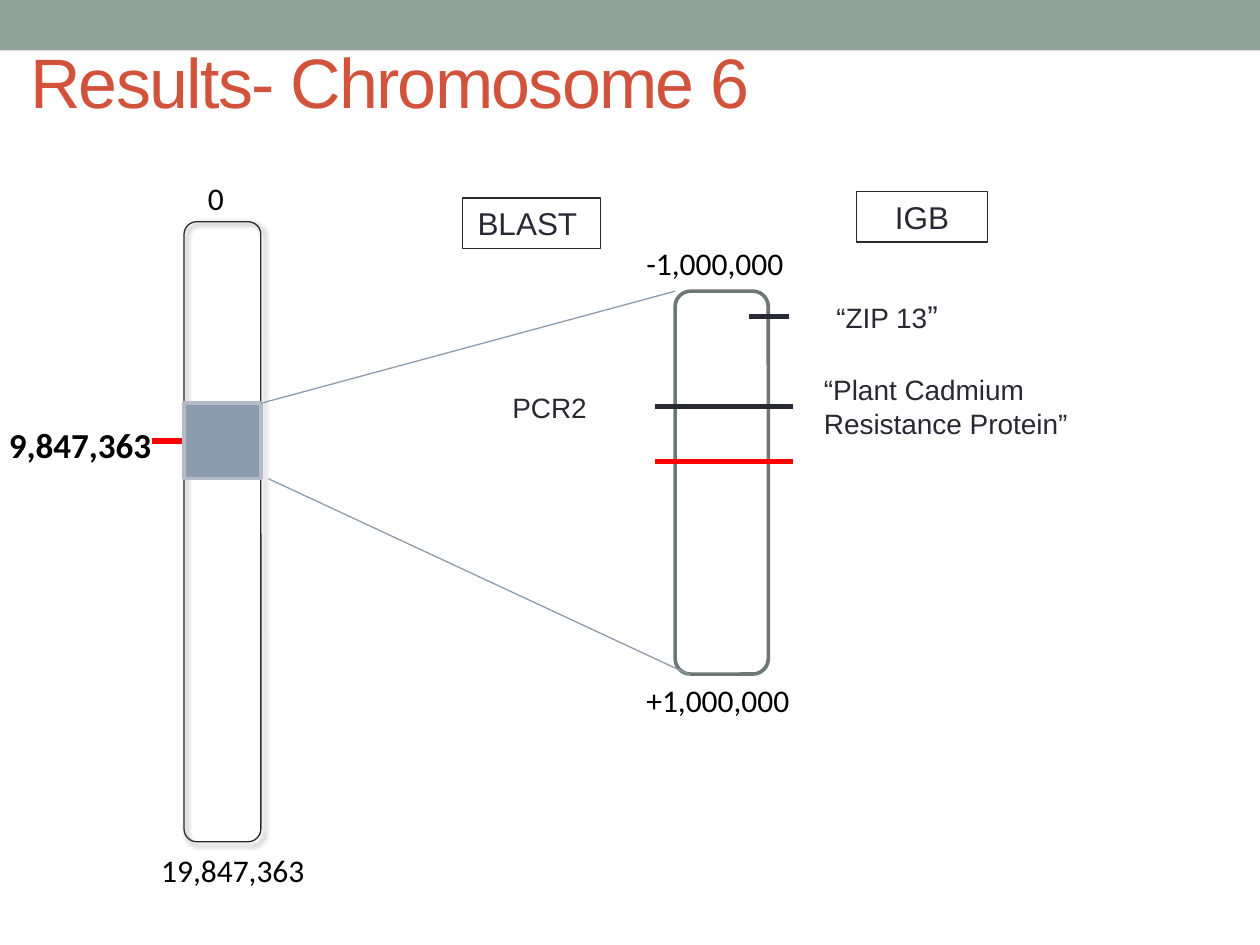
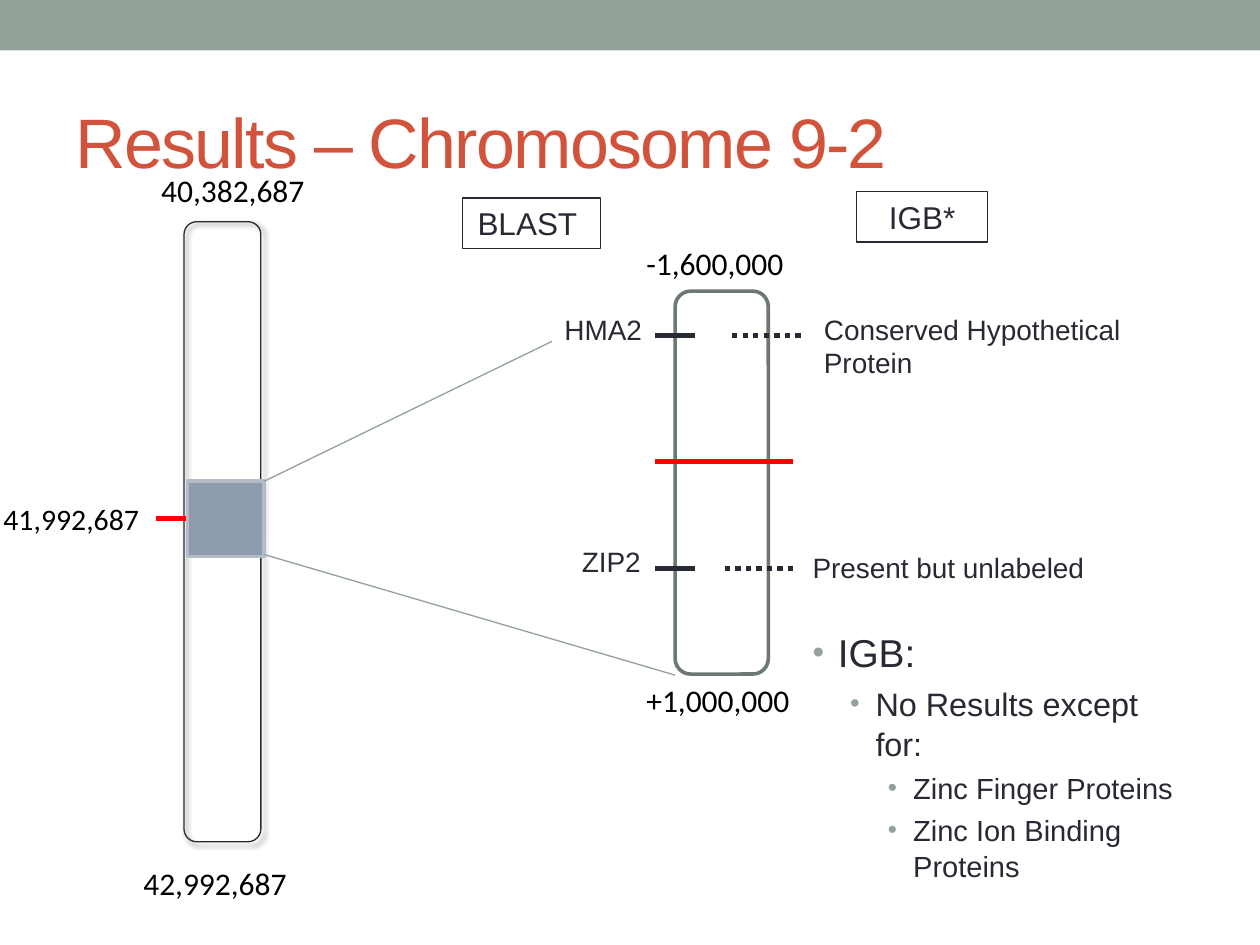
from lxml import etree
from pptx import Presentation
from pptx.dml.color import RGBColor
from pptx.enum.dml import MSO_LINE
from pptx.enum.shapes import MSO_CONNECTOR, MSO_SHAPE
from pptx.enum.text import MSO_ANCHOR, PP_ALIGN
from pptx.oxml.ns import qn
from pptx.util import Cm, Pt

# Colours
BLACK = RGBColor(0x00, 0x00, 0x00)
WHITE = RGBColor(0xFF, 0xFF, 0xFF)
RED = RGBColor(0xFF, 0x00, 0x00)
INK = RGBColor(0x29, 0x29, 0x34)
RUST = RGBColor(0xD2, 0x53, 0x3C)
SAGE = RGBColor(0x93, 0xA2, 0x99)
DARK_SAGE = RGBColor(0x6D, 0x78, 0x71)
STEEL = RGBColor(0x8C, 0x9C, 0xAD)
PALE_STEEL = RGBColor(0xB3, 0xBB, 0xC6)

# Geometry in cm
CHROM_X, CHROM_Y, CHROM_W, CHROM_H = 3.71, 4.47, 1.55, 12.5
REGION_X, REGION_Y, REGION_W, REGION_H = 13.61, 5.87, 1.88, 7.72
BLOCK_H = 1.52
STUB = 0.64                     # red marker left of the block
TICK_X1, TICK_X2 = 13.21, 15.98  # full-width tick on the region
SHORT_TICK = 0.81
DOTTED_TICK = 1.47


def add_run(p, text, size, color=INK, font="Arial", bold=False):
    r = p.add_run()
    r.text = text
    r.font.size, r.font.name, r.font.bold = Pt(size), font, bold
    r.font.color.rgb = color
    return r


def add_text(s, x, y, w, h, runs, align=PP_ALIGN.LEFT, **style):
    """Text box with one paragraph; runs are (text, size) pairs."""
    tf = s.shapes.add_textbox(Cm(x), Cm(y), Cm(w), Cm(h)).text_frame
    tf.word_wrap = True
    p = tf.paragraphs[0]
    p.alignment = align
    for text, size in runs:
        add_run(p, text, size, **style)
    return tf


def add_gene(s, x, y, w, text, h=0.94):
    add_text(s, x, y, w, h, [(text, 16)])


def add_position(s, x, y, w, text, size=18, **style):
    add_text(s, x, y, w, 1.02, [(text, size)], color=BLACK, font="Calibri", **style)


def add_box(s, kind, x, y, w, h, fill=None, line=None, width=0.75):
    sp = s.shapes.add_shape(kind, Cm(x), Cm(y), Cm(w), Cm(h))
    sp.shadow.inherit = False
    if fill is None:
        sp.fill.background()
    else:
        sp.fill.solid()
        sp.fill.fore_color.rgb = fill
    if line is None:
        sp.line.fill.background()
    else:
        sp.line.color.rgb = line
        sp.line.width = Pt(width)
    return sp


def add_heading(s, x, y, w, text):
    sp = add_box(s, MSO_SHAPE.RECTANGLE, x, y, w, 1.02, line=INK)
    tf = sp.text_frame
    tf.vertical_anchor = MSO_ANCHOR.TOP
    tf.paragraphs[0].alignment = PP_ALIGN.CENTER
    add_run(tf.paragraphs[0], text, 18)


def add_line(s, x1, y1, x2, y2, color, width=0.75, dash=None):
    c = s.shapes.add_connector(MSO_CONNECTOR.STRAIGHT, Cm(x1), Cm(y1), Cm(x2), Cm(y2))
    c.line.color.rgb = color
    c.line.width = Pt(width)
    if dash:
        c.line.dash_style = dash
    etree.SubElement(c._element.spPr, qn("a:effectLst"))


def add_tick(s, x1, x2, y, color=INK, dash=None):
    add_line(s, x1, y, x2, y, color, 3, dash)


def add_shadow(sp):
    effects = sp._element.spPr.find(qn("a:effectLst"))
    shadow = etree.SubElement(effects, qn("a:outerShdw"), blurRad=str(Pt(3)),
                              dist=str(Pt(2)), dir="2700000", rotWithShape="0")
    clr = etree.SubElement(shadow, qn("a:srgbClr"), val=str(BLACK))
    etree.SubElement(clr, qn("a:alpha"), val="60000")


def add_bullet(p, text, level, size, bullet_size):
    p.level = level
    p.space_before = Pt(round(size * 0.2, 1))
    p.line_spacing = 1.04
    pPr = p._p.get_or_add_pPr()
    pPr.set("marL", str(Cm(0.51 + 0.76 * level)))
    pPr.set("indent", str(Cm(-0.51)))
    clr = etree.SubElement(pPr, qn("a:buClr"))
    etree.SubElement(clr, qn("a:srgbClr"), val=str(SAGE))
    etree.SubElement(pPr, qn("a:buSzPct"), val=str(bullet_size * 1000))
    etree.SubElement(pPr, qn("a:buFont"), typeface="Arial")
    etree.SubElement(pPr, qn("a:buChar"), char="•")
    add_run(p, text, size)


def add_slide(prs, title, x, y):
    """Blank slide with the top band and the title."""
    s = prs.slides.add_slide(prs.slide_layouts[6])
    add_box(s, MSO_SHAPE.RECTANGLE, 0, 0, 25.4, 1.02, fill=SAGE)
    tf = add_text(s, x, y, 22.86, 2.74, [(title, 40)], color=RUST)
    tf.vertical_anchor = MSO_ANCHOR.MIDDLE
    tf.paragraphs[0].runs[0]._r.get_or_add_rPr().set("spc", "-100")
    return s


def add_chromosome(s, block_x, block_y):
    """Whole chromosome with the marked locus and its block."""
    add_shadow(add_box(s, MSO_SHAPE.ROUNDED_RECTANGLE, CHROM_X, CHROM_Y,
                       CHROM_W, CHROM_H, line=INK))
    add_tick(s, block_x - STUB, block_x + CHROM_W, block_y + BLOCK_H / 2, RED)
    add_box(s, MSO_SHAPE.RECTANGLE, block_x, block_y, CHROM_W, BLOCK_H,
            STEEL, PALE_STEEL, 2.08)


def add_region(s, start, end, igb):
    """Enlarged region with its limits and the column headings."""
    add_box(s, MSO_SHAPE.ROUNDED_RECTANGLE, REGION_X, REGION_Y, REGION_W, REGION_H,
            WHITE, DARK_SAGE, 2.08)
    add_heading(s, 17.27, 3.86, 2.64, igb)
    add_heading(s, 9.32, 3.99, 2.79, "BLAST ")
    add_position(s, 12.78, 4.8, 3.58, start)
    add_position(s, 12.78, 13.61, 3.58, end)
    add_tick(s, TICK_X1, TICK_X2, 9.3, RED)


def build_chromosome_6(prs):
    s = add_slide(prs, "Results- Chromosome 6", 0.36, 0.25)
    add_chromosome(s, CHROM_X, 8.13)
    add_position(s, 3.94, 3.48, 2.92, "0")
    add_position(s, 3, 17.04, 3.45, "19,847,363")
    add_position(s, -0.25, 8.41, 3.73, "9,847,363", 20, bold=True, align=PP_ALIGN.CENTER)
    add_region(s, "-1,000,000", "+1,000,000", "IGB")

    # Genes
    add_tick(s, 15.09, 15.09 + SHORT_TICK, 6.38)
    add_text(s, 16.61, 5.87, 3.94, 1.02, [("“ZIP 13", 16), ("”", 18)])
    add_tick(s, TICK_X1, TICK_X2, 8.2)
    add_gene(s, 16.36, 7.39, 6.07, "“Plant Cadmium Resistance Protein”", 1.63)
    add_gene(s, 10.08, 7.75, 2.67, "PCR2")

    # Zoom lines
    add_line(s, 5.26, 8.13, REGION_X, REGION_Y, STEEL)
    add_line(s, 5.41, 9.65, 13.92, 13.61, STEEL)


def build_chromosome_9(prs):
    s = add_slide(prs, "Results – Chromosome 9-2", 1.27, 1.47)
    add_chromosome(s, 3.78, 9.7)
    add_position(s, 3, 3.33, 3.68, "40,382,687")
    add_position(s, 2.64, 17.3, 3.68, "42,992,687")
    add_position(s, -0.18, 9.98, 3.68, "41,992,687", 17)
    add_region(s, "-1,600,000", "+1,000,000", "IGB*")

    # Genes: solid tick for BLAST, dotted tick for IGB
    for y, dotted_x in ((6.76, 14.76), (11.46, 14.61)):
        add_tick(s, TICK_X1, TICK_X1 + SHORT_TICK, y)
        add_tick(s, dotted_x, dotted_x + DOTTED_TICK, y, dash=MSO_LINE.ROUND_DOT)
    add_gene(s, 11.13, 6.17, 2.21, "HMA2")
    add_gene(s, 11.48, 10.85, 1.8, "ZIP2")
    add_gene(s, 16.36, 6.17, 6.5, "Conserved Hypothetical Protein", 1.63)
    add_gene(s, 16.13, 10.97, 6.5, "Present but unlabeled")

    # Zoom lines
    add_line(s, 5.33, 9.7, 11.13, 6.88, SAGE)
    add_line(s, 5.33, 11.18, REGION_X, 13.61, SAGE)

    # IGB findings
    tf = add_text(s, 16.13, 12.52, 8, 5.79, [])
    findings = (("IGB:", 0, 22.2, 85), ("No Results except for:", 1, 18.5, 85),
                ("Zinc Finger Proteins", 2, 16.6, 90),
                ("Zinc Ion Binding Proteins", 2, 16.6, 90))
    for i, finding in enumerate(findings):
        add_bullet(tf.add_paragraph() if i else tf.paragraphs[0], *finding)


def main():
    prs = Presentation()
    prs.slide_width, prs.slide_height = Cm(25.4), Cm(19.05)
    build_chromosome_6(prs)
    build_chromosome_9(prs)
    prs.save("out.pptx")


if __name__ == "__main__":
    main()
